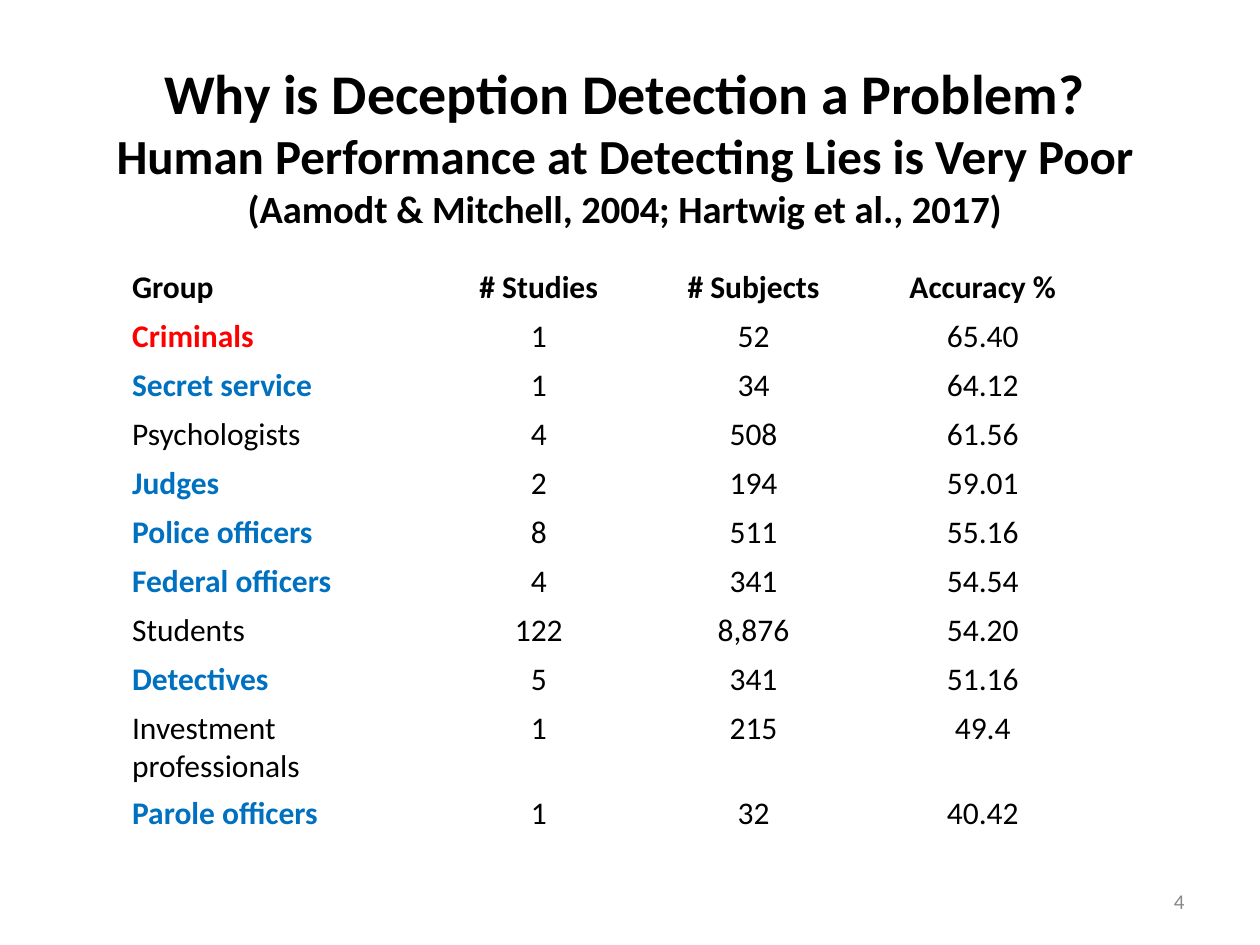
from typing import NamedTuple

from pptx import Presentation
from pptx.dml.color import RGBColor
from pptx.enum.text import MSO_ANCHOR, MSO_AUTO_SIZE, PP_ALIGN
from pptx.util import Pt

LEFT, CENTER, RIGHT = PP_ALIGN.LEFT, PP_ALIGN.CENTER, PP_ALIGN.RIGHT
MIDDLE = MSO_ANCHOR.MIDDLE
NO_AUTOFIT = MSO_AUTO_SIZE.NONE

BLACK = RGBColor(0x00, 0x00, 0x00)
RED = RGBColor(0xFF, 0x00, 0x00)
BLUE = RGBColor(0x00, 0x70, 0xC0)
GRAY = RGBColor(0x88, 0x88, 0x88)

FONT = "Calibri"
TITLE_ONLY = 5
ROW_HEIGHT = 28
COLUMN_WIDTHS = (180, 114.5, 131, 131)
CELL_INSET_X, CELL_INSET_Y = 4.9, 2.9


class TitleLine(NamedTuple):
    wording: str
    size: float


class Group(NamedTuple):
    name: str
    studies: str
    subjects: str
    accuracy: str
    color: RGBColor = BLACK


TITLE_LINES = (
    TitleLine("Why is Deception Detection a Problem?", 32),
    TitleLine("Human Performance at Detecting Lies is Very Poor", 28),
    TitleLine("(Aamodt & Mitchell, 2004; Hartwig et al., 2017)", 22),
)
HEADINGS = ("Group", "# Studies", "# Subjects", "Accuracy %")
GROUPS = (
    Group("Criminals", "1", "52", "65.40", RED),
    Group("Secret service", "1", "34", "64.12", BLUE),
    Group("Psychologists", "4", "508", "61.56"),
    Group("Judges", "2", "194", "59.01", BLUE),
    Group("Police officers", "8", "511", "55.16", BLUE),
    Group("Federal officers", "4", "341", "54.54", BLUE),
    Group("Students", "122", "8,876", "54.20"),
    Group("Detectives", "5", "341", "51.16", BLUE),
    Group("Investment professionals", "1", "215", "49.4"),
    Group("Parole officers", "1", "32", "40.42", BLUE),
)


def format_run(run, size: float, color: RGBColor = BLACK, bold: bool = False) -> None:
    run.font.name = FONT
    run.font.size = Pt(size)
    run.font.bold = bold
    run.font.color.rgb = color


def place_title(slide) -> None:
    title = slide.shapes.title
    title.left, title.top = Pt(48.2), Pt(28.1)
    title.width, title.height = Pt(617.8), Pt(109.4)
    frame = title.text_frame
    frame.auto_size = NO_AUTOFIT
    frame.vertical_anchor = MIDDLE
    heading = frame.paragraphs[0]
    heading.text = "\v".join(line.wording for line in TITLE_LINES)
    heading.alignment = CENTER
    for run, line in zip(heading.runs, TITLE_LINES):
        format_run(run, line.size, bold=True)


def fill_cell(cell, wording: str, alignment: PP_ALIGN, color: RGBColor, bold: bool) -> None:
    cell.fill.background()
    cell.margin_left = cell.margin_right = Pt(CELL_INSET_X)
    cell.margin_top = cell.margin_bottom = Pt(CELL_INSET_Y)
    paragraph = cell.text_frame.paragraphs[0]
    paragraph.text = wording
    paragraph.alignment = alignment
    format_run(paragraph.runs[0], 18, color, bold)


def add_accuracy_table(slide) -> None:
    row_count = len(GROUPS) + 1
    table = slide.shapes.add_table(
        row_count, len(HEADINGS), Pt(70.6), Pt(150.5),
        Pt(sum(COLUMN_WIDTHS)), Pt(row_count * ROW_HEIGHT),
    ).table
    table.first_row = table.horz_banding = False
    for column, width in zip(table.columns, COLUMN_WIDTHS):
        column.width = Pt(width)

    for column, heading in enumerate(HEADINGS):
        fill_cell(table.cell(0, column), heading, CENTER if column else LEFT, BLACK, True)
    for row, group in enumerate(GROUPS, start=1):
        fill_cell(table.cell(row, 0), group.name, LEFT, group.color, group.color != BLACK)
        figures = (group.studies, group.subjects, group.accuracy)
        for column, figure in enumerate(figures, start=1):
            fill_cell(table.cell(row, column), figure, CENTER, BLACK, False)


def add_page_number(slide, number: str) -> None:
    frame = slide.shapes.add_textbox(Pt(516), Pt(500.5), Pt(168), Pt(28.8)).text_frame
    frame.word_wrap = True
    frame.vertical_anchor = MIDDLE
    paragraph = frame.paragraphs[0]
    paragraph.text = number
    paragraph.alignment = RIGHT
    format_run(paragraph.runs[0], 12, GRAY)


def main() -> None:
    presentation = Presentation()
    presentation.slide_width, presentation.slide_height = Pt(720), Pt(540)
    slide = presentation.slides.add_slide(presentation.slide_layouts[TITLE_ONLY])
    place_title(slide)
    add_page_number(slide, "4")
    add_accuracy_table(slide)
    presentation.save("out.pptx")


if __name__ == "__main__":
    main()
